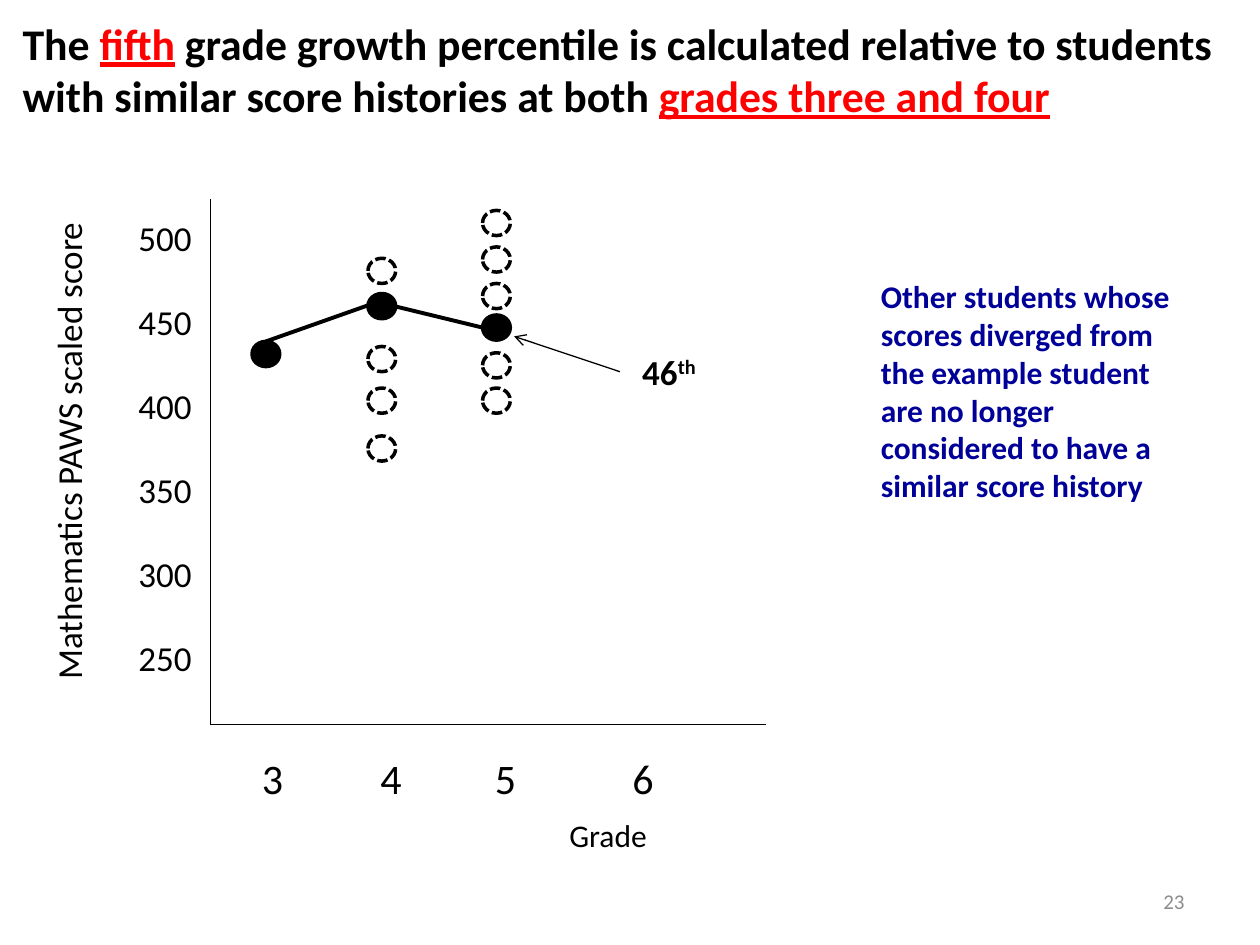
from pptx import Presentation
from pptx import util as u
from pptx.dml.color import RGBColor
from pptx.enum import dml, shapes, text
from pptx.oxml.ns import qn
from lxml import etree

COLORS = {"ink": "000000", "accent": "FF0000", "note": "000099",
          "muted": "8C8C8C", "paper": "FFFFFF"}
FONT = "Calibri"
ALIGN = text.PP_ALIGN
DOT_W, DOT_H = 0.22, 0.2


def rgb(name):
    return RGBColor.from_string(COLORS[name])


def add_run(p, content, size=20, color="ink", bold=False, underline=False, baseline=None):
    r = p.add_run()
    r.text = content
    f = r.font
    f.name, f.size, f.bold, f.underline = FONT, u.Pt(size), bold, underline
    f.color.rgb = rgb(color)
    if baseline:
        r._r.get_or_add_rPr().set("baseline", str(baseline * 1000))


class SlideBuilder:
    def __init__(self, slide):
        self.s = slide

    def title(self, box, runs, size):
        sp = self.s.shapes.title
        sp.left, sp.top, sp.width, sp.height = map(u.Inches, box)
        tf = sp.text_frame
        tf.word_wrap = True
        tf.auto_size = text.MSO_AUTO_SIZE.NONE
        tf.vertical_anchor = text.MSO_ANCHOR.TOP
        p = tf.paragraphs[0]
        p.alignment = ALIGN.LEFT
        for content, fmt in runs:
            add_run(p, content, size=size, bold=True, **fmt)

    def label(self, box, content, align=ALIGN.LEFT, rotation=0, inset=(0.1, 0.05),
              anchor=text.MSO_ANCHOR.TOP, **fmt):
        sp = self.s.shapes.add_textbox(*map(u.Inches, box))
        sp.rotation = rotation
        tf = sp.text_frame
        tf.word_wrap = True
        tf.vertical_anchor = anchor
        tf.margin_left = tf.margin_right = u.Inches(inset[0])
        tf.margin_top = tf.margin_bottom = u.Inches(inset[1])
        p = tf.paragraphs[0]
        p.alignment = align
        add_run(p, content, **fmt)
        return sp

    def dot(self, x, y, solid):
        sp = self.s.shapes.add_shape(shapes.MSO_SHAPE.OVAL,
                                     *map(u.Inches, (x, y, DOT_W, DOT_H)))
        sp.shadow.inherit = False
        sp.line.color.rgb = rgb("ink")
        sp.line.width = u.Pt(2)
        if solid:
            sp.fill.solid()
            sp.fill.fore_color.rgb = rgb("ink")
        else:
            sp.fill.background()
            sp.line.dash_style = dml.MSO_LINE.SQUARE_DOT

    def line(self, start, end, width=0.75, arrow=False):
        c = self.s.shapes.add_connector(shapes.MSO_CONNECTOR.STRAIGHT,
                                        *map(u.Inches, start + end))
        c.line.color.rgb = rgb("ink")
        c.line.width = u.Pt(width)
        if arrow:
            etree.SubElement(c.line._get_or_add_ln(), qn("a:tailEnd"), type="arrow")
        etree.SubElement(c._element.spPr, qn("a:effectLst"))


def main():
    prs = Presentation()
    prs.slide_width, prs.slide_height = u.Inches(10), u.Inches(7.5)
    b = SlideBuilder(prs.slides.add_slide(prs.slide_layouts[5]))

    key = {"color": "accent", "underline": True}
    b.title((0.08, 0.08, 9.92, 0.94), [
        ("The ", {}),
        ("fifth", key),
        (" grade growth percentile is calculated relative to students "
         "with similar score histories at both ", {}),
        ("grades three and four", key),
    ], size=25)

    origin = (1.67, 5.75)
    b.line((1.67, 1.58), origin)
    b.line(origin, (6.08, 5.75))
    for i, score in enumerate(range(500, 200, -50)):
        b.label((1, 1.67 + i * 2 / 3, 1, 0.44), str(score))
    for grade, x in zip("3456", (1.98, 2.92, 3.83, 4.92)):
        b.label((x, 5.92, 0.5, 0.5), grade, size=24)
    b.label((4.42, 6.43, 1.16, 0.4), "Grade", size=18)
    b.label((-1.86, 3.36, 4.81, 0.44), "Mathematics PAWS scaled score",
            align=ALIGN.CENTER, rotation=270)

    percentile = b.label((4.92, 2.73, 0.92, 0.44), "46", align=ALIGN.CENTER, bold=True)
    percentile.fill.solid()
    percentile.fill.fore_color.rgb = rgb("paper")
    percentile.text_frame.margin_right = u.Inches(0.24)
    add_run(percentile.text_frame.paragraphs[0], "th", bold=True, baseline=30)
    b.line((4.92, 2.95), (4.08, 2.67), arrow=True)

    b.line((2.11, 2.71), (3.1, 2.36), width=2.25)
    b.line((3.13, 2.43), (3.83, 2.6), width=2.25)
    students = [
        (2, 2.71, []),
        (2.92, 2.33, [2.05, 2.75, 3.08, 3.46]),
        (3.83, 2.5, [1.67, 1.96, 2.25, 2.8, 3.08]),
    ]
    for x, example, peers in students:
        b.dot(x, example, solid=True)
        for y in peers:
            b.dot(x, y, solid=False)

    b.label((6.92, 2.17, 2.58, 1.87),
            "Other students whose scores diverged from the example student are "
            "no longer considered to have a similar score history",
            inset=(0.07, 0.03), size=18, color="note", bold=True)
    b.label((7.17, 6.95, 2.33, 0.4), "23", align=ALIGN.RIGHT,
            anchor=text.MSO_ANCHOR.MIDDLE, size=12, color="muted")

    prs.save("out.pptx")


if __name__ == "__main__":
    main()
